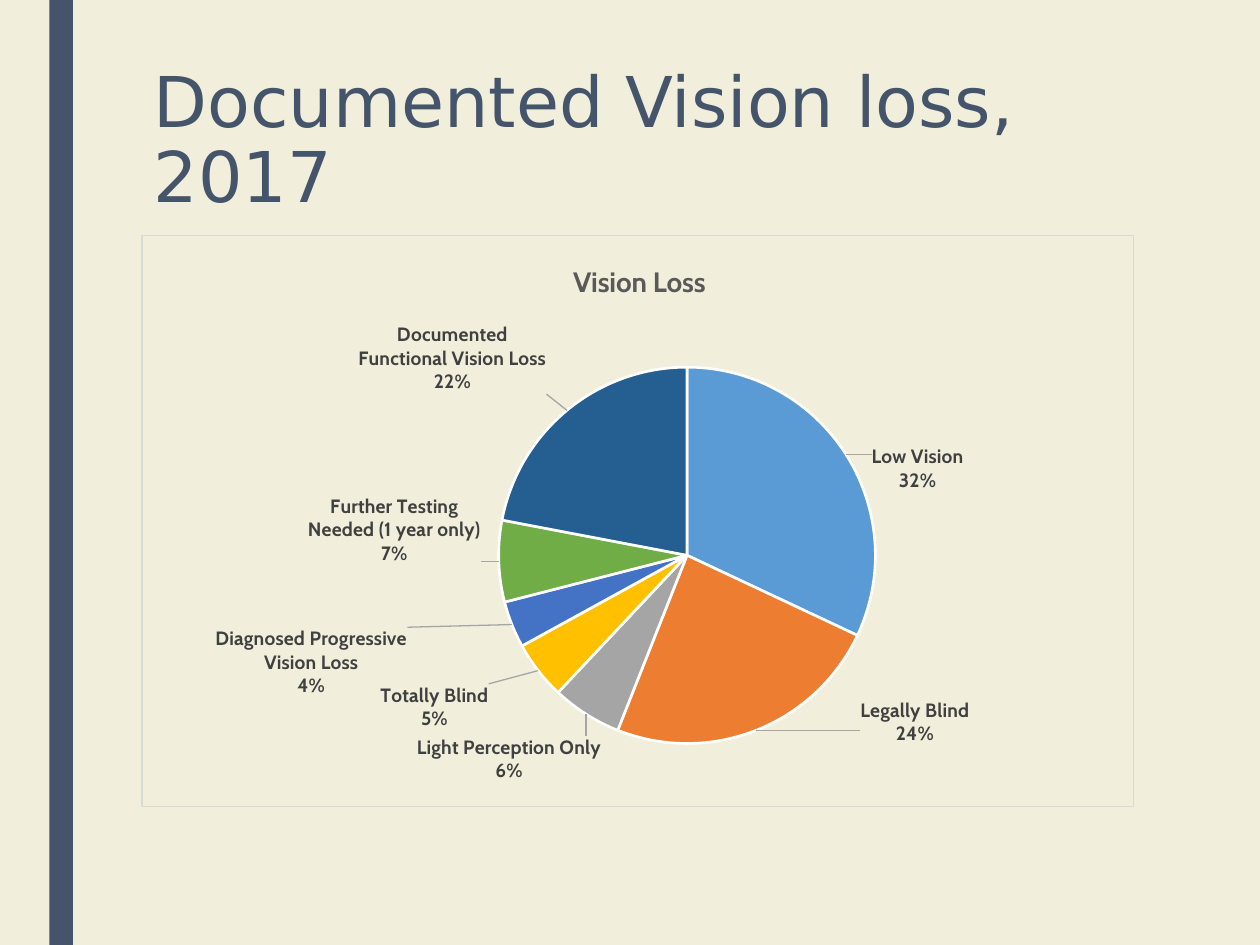
from dataclasses import dataclass

from lxml import etree
from pptx import Presentation
from pptx import util as u
from pptx.chart.data import CategoryChartData
from pptx.dml.color import RGBColor
from pptx.enum import chart as charts, shapes, text
from pptx.oxml import parse_xml
from pptx.oxml.ns import nsdecls, qn

COLOURS = {"paper": "F1EEDB", "slate": "44546A", "heading": "595959",
           "label": "404040", "border": "D9D9D9", "leader": "A6A6A6",
           "white": "FFFFFF", "black": "000000"}
CHART_LEFT, CHART_TOP, CHART_WIDTH, CHART_HEIGHT = 80.7, 134.2, 567.2, 327.2


@dataclass
class Slice:
    name: str
    percent: int
    colour: str
    shift_x: float  # label shift from its usual place, in points
    shift_y: float


SLICES = [
    Slice("Low Vision", 32, "5B9BD5", 11, 24),
    Slice("Legally Blind", 24, "ED7D31", 58, -22),
    Slice("Light Perception Only", 6, "A5A5A5", 11, 9),
    Slice("Totally Blind", 5, "FFC000", -25, 5),
    Slice("Diagnosed Progressive Vision Loss", 4, "4472C4", -56, 0),
    Slice("Further Testing Needed (1 year only)", 7, "70AD47", -6, -18),
    Slice("Documented Functional Vision Loss", 22, "255E91", -9, -6),
]


def rgb(name: str) -> RGBColor:
    return RGBColor.from_string(COLOURS.get(name, name))


def format_font(font, colour: str, **values) -> None:
    for key, value in values.items():
        setattr(font, key, value)
    font.color.rgb = rgb(colour)


def layout_xml(modes: tuple = (), **values: float):
    """Manual chart layout, with lengths as fractions of the chart."""
    parts = [f'<c:{mode} val="{value}"/>' for mode, value in modes]
    parts += [f'<c:{key} val="{value:.4f}"/>' for key, value in values.items()]
    return parse_xml(f'<c:layout {nsdecls("c")}><c:manualLayout>'
                     f'{"".join(parts)}</c:manualLayout></c:layout>')


def line_xml(tag: str, colour: str):
    """Shape properties with a thin line and no fill."""
    inner = (f'<a:noFill/><a:ln w="{u.Pt(0.75)}"><a:solidFill>'
             f'<a:srgbClr val="{COLOURS[colour]}"/></a:solidFill></a:ln>')
    if tag == "leaderLines":
        inner = f'<c:spPr>{inner}</c:spPr>'
    return parse_xml(f'<c:{tag} {nsdecls("c", "a")}>{inner}</c:{tag}>')


def show_name_and_percent(labels) -> None:
    for tag, value in (("showVal", "0"), ("showCatName", "1"), ("showPercent", "1")):
        labels.find(qn(f"c:{tag}")).set("val", value)
    separator = etree.Element(qn("c:separator"))
    separator.text = "\n"
    labels.find(qn("c:showBubbleSize")).addnext(separator)


def add_bar(page) -> None:
    bar = page.shapes.add_shape(shapes.MSO_SHAPE.RECTANGLE,
                                u.Pt(28.2), 0, u.Pt(13.5), u.Pt(540))
    bar.shadow.inherit = False
    bar.fill.solid()
    bar.fill.fore_color.rgb = rgb("slate")
    bar.line.fill.background()


def set_title(page, words: str) -> None:
    title = page.shapes.title
    places = {"left": 80.7, "top": 35.3, "width": 567.2, "height": 116.6}
    for key, value in places.items():
        setattr(title, key, u.Pt(value))
    frame = title.text_frame
    frame.text = words
    frame.word_wrap = True
    frame.auto_size = text.MSO_AUTO_SIZE.NONE
    frame.vertical_anchor = text.MSO_ANCHOR.TOP
    para = frame.paragraphs[0]
    para.alignment = text.PP_ALIGN.LEFT
    para.line_spacing = 0.89
    format_font(para.runs[0].font, "slate", name="DejaVu Sans", size=u.Pt(40))


def add_pie(page, slices: list[Slice]) -> None:
    data = CategoryChartData()
    data.categories = [part.name for part in slices]
    data.add_series("Series 1", [part.percent for part in slices])
    chart = page.shapes.add_chart(
        charts.XL_CHART_TYPE.PIE, u.Pt(CHART_LEFT), u.Pt(CHART_TOP),
        u.Pt(CHART_WIDTH), u.Pt(CHART_HEIGHT), data).chart
    chart.has_legend = False
    format_font(chart.font, "black", name="Cabin", size=u.Pt(10))

    # Chart title
    chart.has_title = True
    heading = chart.chart_title
    heading.include_in_layout = False
    heading.text_frame.text = "Vision Loss"
    format_font(heading.text_frame.paragraphs[0].runs[0].font, "heading",
                name="Cabin", size=u.Pt(16), bold=True)
    root = chart.element
    edges = (("xMode", "edge"), ("yMode", "edge"))
    title = root.find(".//" + qn("c:title"))
    for old in title.findall(qn("c:layout")):
        title.remove(old)
    title.find(qn("c:tx")).addnext(layout_xml(edges, x=0.43, y=0.04))

    # Border and plot area
    root.find(qn("c:chart")).addnext(line_xml("spPr", "border"))
    area = root.find(".//" + qn("c:plotArea"))
    for old in area.findall(qn("c:layout")):
        area.remove(old)
    area.insert(0, layout_xml((("layoutTarget", "inner"),) + edges,
                              x=0.36, y=0.23, w=0.38, h=0.66))

    # Slices and their labels
    plot = chart.plots[0]
    plot.vary_by_categories = True
    series = plot.series[0]
    outside = charts.XL_LABEL_POSITION.OUTSIDE_END
    style = {"name": "Cabin", "size": u.Pt(11), "bold": True}
    labels = series.data_labels
    labels.position = outside
    format_font(labels.font, "label", **style)
    for index, part in enumerate(slices):
        point = series.points[index]
        point.format.fill.solid()
        point.format.fill.fore_color.rgb = rgb(part.colour)
        point.format.line.color.rgb = rgb("white")
        point.format.line.width = u.Pt(1.5)
        point.data_label.position = outside
        format_font(point.data_label.font, "label", **style)

    group = root.find(".//" + qn("c:dLbls"))
    show_name_and_percent(group)
    for label, part in zip(group.findall(qn("c:dLbl")), slices):
        show_name_and_percent(label)
        label.find(qn("c:idx")).addnext(layout_xml(
            x=part.shift_x / CHART_WIDTH, y=part.shift_y / CHART_HEIGHT))
    if group.find(qn("c:showLeaderLines")) is None:
        etree.SubElement(group, qn("c:showLeaderLines"))
    group.find(qn("c:showLeaderLines")).set("val", "1")
    group.append(line_xml("leaderLines", "leader"))


def main() -> None:
    deck = Presentation()
    deck.slide_width, deck.slide_height = u.Pt(720), u.Pt(540)
    page = deck.slides.add_slide(deck.slide_layouts[5])
    page.background.fill.solid()
    page.background.fill.fore_color.rgb = rgb("paper")
    add_bar(page)
    set_title(page, "Documented Vision loss, 2017")
    add_pie(page, SLICES)
    deck.save("out.pptx")


if __name__ == "__main__":
    main()
